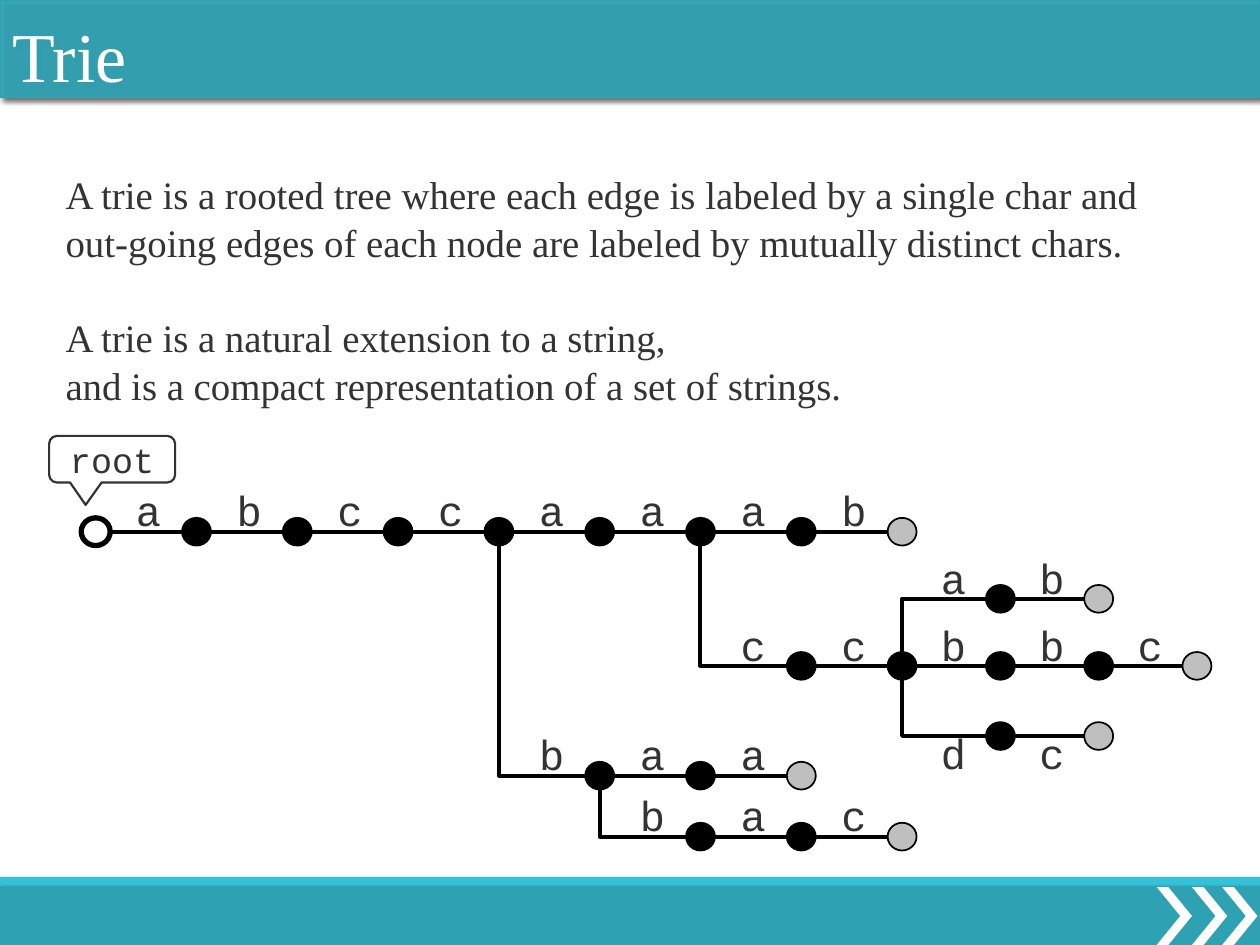
from dataclasses import dataclass

from lxml.etree import SubElement
from pptx import Presentation
from pptx.dml.color import RGBColor
from pptx.enum.shapes import MSO_CONNECTOR, MSO_SHAPE
from pptx.enum.text import MSO_ANCHOR, MSO_AUTO_SIZE, PP_ALIGN
from pptx.oxml.ns import qn
from pptx.util import Inches, Pt


@dataclass(frozen=True)
class Theme:
    """Colours, fonts and type sizes of the slide."""
    teal: str = "2EA2B3"
    bright: str = "35C1D7"
    white: str = "FFFFFF"
    ink: str = "333333"
    black: str = "000000"
    leaf: str = "BFBFBF"
    serif: str = "Times New Roman"
    mono: str = "Courier New"
    title: float = 40
    body: float = 22.2
    label: float = 24
    callout: float = 20
    edge: float = 2.25


@dataclass(frozen=True)
class Box:
    """A region in inches."""
    left: float
    top: float
    width: float
    height: float

    def emu(self):
        """Return the four lengths in slide units."""
        return [Inches(n) for n in (self.left, self.top, self.width, self.height)]


@dataclass(frozen=True)
class Branch:
    """A run of labelled edges leaving the node at a column and row."""
    column: int
    parent_row: float
    row: float
    letters: str
    label_rise: float = 0.42


THEME = Theme()
BRANCHES = [
    Branch(0, 0, 0, "abccaaab"),
    Branch(6, 0, 0.44, "ccbbc"),
    Branch(8, 0.44, 0.22, "ab"),
    Branch(8, 0.44, 0.67, "dc", 0.12),
    Branch(4, 0, 0.8, "baa"),
    Branch(5, 0.8, 1, "bac"),
]
STATEMENTS = [
    ("A trie is a rooted tree where each edge is labeled by a single char and", 0),
    ("out-going edges of each node are labeled by mutually distinct chars.", 0),
    ("A trie is a natural extension to a string,", 27),
    ("and is a compact representation of a set of strings.", 0),
]
NODE_WIDTH, NODE_HEIGHT = 0.23, 0.22


def rgb(colour):
    """Turn a hex string into a colour."""
    return RGBColor.from_string(colour)


def write(frame, text, size, font=THEME.mono, colour=THEME.ink, align=PP_ALIGN.LEFT,
          anchor=MSO_ANCHOR.TOP, wrap=False, first=True, before=0, spacing=1.0):
    """Write one formatted paragraph into a text frame."""
    frame.auto_size = MSO_AUTO_SIZE.NONE
    frame.word_wrap = wrap
    frame.vertical_anchor = anchor
    paragraph = frame.paragraphs[0] if first else frame.add_paragraph()
    paragraph.text = text
    paragraph.alignment = align
    paragraph.space_before = Pt(before)
    paragraph.line_spacing = spacing
    paragraph.font.size = Pt(size)
    paragraph.font.name = font
    paragraph.font.color.rgb = rgb(colour)
    return paragraph


def paint(shape, fill, line=None, width=1):
    """Fill and outline a shape."""
    shape.fill.solid()
    shape.fill.fore_color.rgb = rgb(fill)
    if line:
        shape.line.color.rgb = rgb(line)
        shape.line.width = Pt(width)
    else:
        shape.line.fill.background()


def draw(slide, kind, box, fill, line=None, width=1):
    """Add a painted preset shape without a shadow."""
    shape = slide.shapes.add_shape(kind, *box.emu())
    shape.shadow.inherit = False
    paint(shape, fill, line, width)
    return shape


def cast_shadow(shape):
    """Give a shape a soft shadow towards the lower right."""
    shape.shadow.inherit = False
    effects = shape._element.spPr.find(qn("a:effectLst"))
    outer = SubElement(effects, qn("a:outerShdw"), blurRad=str(Pt(3)), dist=str(Pt(2)),
                       dir="2700000", algn="tl", rotWithShape="0")
    colour = SubElement(outer, qn("a:srgbClr"), val=THEME.black)
    SubElement(colour, qn("a:alpha"), val="60000")


def link(slide, start, end, bent=False):
    """Connect two points, going sideways first when bent."""
    kind = MSO_CONNECTOR.ELBOW if bent else MSO_CONNECTOR.STRAIGHT
    edge = slide.shapes.add_connector(kind, *[Inches(n) for n in (*start, *end)])
    edge.line.color.rgb = rgb(THEME.black)
    edge.line.width = Pt(THEME.edge)
    properties = edge._element.spPr
    SubElement(properties, qn("a:effectLst"))
    if bent:
        properties.find(qn("a:prstGeom")).set("prst", "bentConnector2")


def place(placeholder, box):
    """Move a placeholder to a box."""
    placeholder.left, placeholder.top, placeholder.width, placeholder.height = box.emu()


def header(slide, box):
    """Turn the title placeholder into the top bar."""
    title = slide.shapes.title
    place(title, box)
    paint(title, THEME.teal, THEME.teal)
    colour = title._element.spPr.find(qn("a:solidFill")).find(qn("a:srgbClr"))
    SubElement(colour, qn("a:alpha"), val="92000")
    cast_shadow(title)
    title.text_frame.margin_top = Inches(0.1)
    write(title.text_frame, "Trie", THEME.title, THEME.serif, THEME.white, wrap=True)


def definition(slide, box):
    """Write the statements into the body placeholder."""
    body = slide.placeholders[1]
    place(body, box)
    for index, (statement, gap) in enumerate(STATEMENTS):
        paragraph = write(body.text_frame, statement, THEME.body, THEME.serif,
                          first=index == 0, before=gap, spacing=1.03)
        properties = paragraph._p.get_or_add_pPr()
        properties.set("marL", "0")
        properties.set("indent", "0")
        properties.insert_element_before(
            properties.makeelement(qn("a:buNone")), "a:tabLst", "a:defRPr", "a:extLst")


def footer(slide, box):
    """Draw the bottom band with its stripe and chevrons."""
    band = Box(box.left, box.top + 0.08, box.width, box.height - 0.08)
    stripe = Box(box.left, box.top, box.width, 0.24)
    cast_shadow(draw(slide, MSO_SHAPE.RECTANGLE, stripe, THEME.bright))
    cast_shadow(draw(slide, MSO_SHAPE.RECTANGLE, band, THEME.teal, THEME.teal))
    for inset in (0.82, 0.54, 0.3):
        mark = Box(box.left + box.width - inset, band.top, 0.28, band.height)
        chevron = draw(slide, MSO_SHAPE.CHEVRON, mark, THEME.white)
        chevron.adjustments[0] = 0.67


def trie(slide, box):
    """Draw the trie on its grid of columns and rows."""
    def point(column, row):
        """Return the centre of a grid position."""
        across = 0.8 * min(column, 8) + 0.78 * max(column - 8, 0)
        return box.left + across, box.top + row * box.height

    def node(column, row, fill, width=1):
        """Draw a node at a grid position."""
        x, y = point(column, row)
        spot = Box(x - NODE_WIDTH / 2, y - NODE_HEIGHT / 2, NODE_WIDTH, NODE_HEIGHT)
        draw(slide, MSO_SHAPE.OVAL, spot, fill, THEME.black, width)

    for branch in BRANCHES:
        for step, letter in enumerate(branch.letters):
            column = branch.column + step
            x, y = point(column, branch.row)
            child_x, _ = point(column + 1, branch.row)
            if step == 0 and branch.row != branch.parent_row:
                _, parent_y = point(column, branch.parent_row)
                side = NODE_HEIGHT / 2 if y > parent_y else -NODE_HEIGHT / 2
                link(slide, (child_x - 0.1, y), (x, parent_y + side), bent=True)
            else:
                link(slide, (x + 0.1, y), (child_x - 0.1, y))
            last = step == len(branch.letters) - 1
            node(column + 1, branch.row, THEME.leaf if last else THEME.black)
            spot = Box((x + child_x) / 2 - 0.18, y - branch.label_rise, 0.4, 0.5)
            write(slide.shapes.add_textbox(*spot.emu()).text_frame, letter, THEME.label)
    node(0, 0, THEME.white, 3)

    bubble = Box(box.left - 0.37, box.top - 0.76, 1, 0.37)
    root = draw(slide, MSO_SHAPE.ROUNDED_RECTANGULAR_CALLOUT, bubble,
                THEME.white, THEME.ink, 1.25)
    root.adjustments[0], root.adjustments[1], root.adjustments[2] = -0.21, 0.98, 0.17
    write(root.text_frame, "root", THEME.callout, align=PP_ALIGN.CENTER,
          anchor=MSO_ANCHOR.MIDDLE, wrap=True)


def main():
    """Build and save the slide."""
    deck = Presentation()
    deck.slide_width, deck.slide_height = Inches(10), Inches(7.5)
    slide = deck.slides.add_slide(deck.slide_layouts[1])
    footer(slide, Box(0, 6.96, 10, 0.54))
    trie(slide, Box(0.76, 4.22, 8.74, 2.42))
    definition(slide, Box(0.42, 1.29, 9.23, 1.63))
    header(slide, Box(0, 0, 10, 0.77))
    deck.save("out.pptx")


if __name__ == "__main__":
    main()
